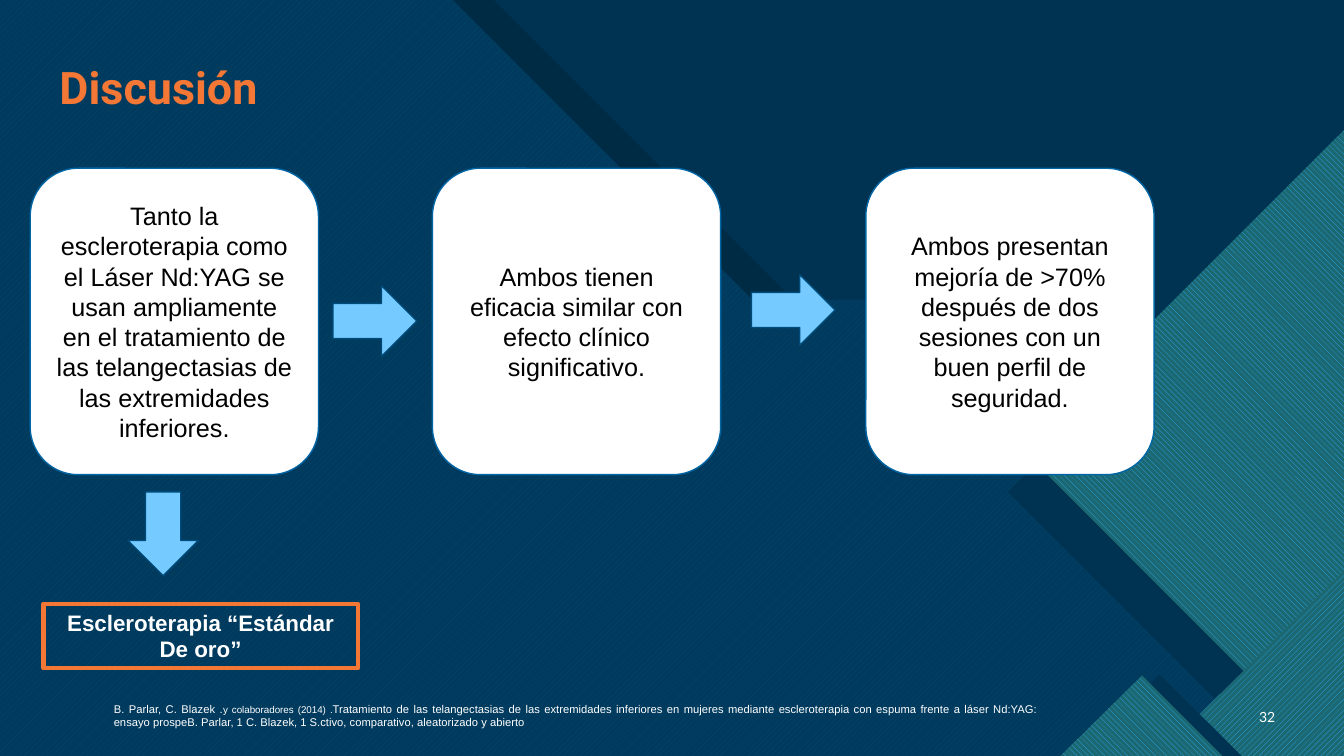
from dataclasses import dataclass
from typing import Any, Optional

import lxml.etree
import pptx
import pptx.dml.color
import pptx.enum.dml
import pptx.enum.shapes
import pptx.enum.text
import pptx.oxml.ns
import pptx.util

Pt = pptx.util.Pt
Kind = pptx.enum.shapes.MSO_SHAPE
Weave = pptx.enum.dml.MSO_PATTERN
Align = pptx.enum.text.PP_ALIGN
Anchor = pptx.enum.text.MSO_ANCHOR


@dataclass(frozen=True)
class Theme:
    navy: str = "003352"
    black: str = "000000"
    white: str = "FFFFFF"
    orange: str = "F47735"
    sky: str = "75CAFF"
    edge: str = "0065A4"
    rim: str = "004B79"
    aqua: str = "47C3D3"
    bright: str = "2FAFFF"
    teal: str = "1B6872"
    sans: str = "Arial"
    head: str = "Roboto"
    page: str = "Lato"
    title: float = 32
    body: float = 18
    label: float = 16
    folio: float = 10
    note: float = 8
    small: float = 7


THEME = Theme()


@dataclass(frozen=True)
class Box:
    left: float
    top: float
    width: float
    height: float


@dataclass(frozen=True)
class Panel:
    """A backdrop outline, plain or woven with a second colour."""
    points: tuple[tuple[float, float], ...]
    color: str
    back: Optional[str] = None
    weave: Any = None
    alpha: int = 100


@dataclass(frozen=True)
class Card:
    left: float
    text: str


@dataclass(frozen=True)
class Arrow:
    left: float
    top: float
    turn: int = 0


@dataclass(frozen=True)
class Run:
    text: str
    size: float


def slope(start: float, end: float) -> tuple[tuple[float, float], ...]:
    """Left-hand area whose edge steps down at 45 degrees."""
    step = 213.84
    shelf = start + step + 90.72
    low = step + end - shelf
    tail = ((end, low), (end, 540)) if low < 540 else ((end, 540),)
    return ((0, 0), (start, 0), (start + step, step), (shelf, step), *tail, (0, 540))


PANELS = (
    Panel(((0, 0), (960, 0), (960, 540), (0, 540)), THEME.navy),
    Panel(slope(352.8, 960), THEME.black),
    Panel(slope(323.28, 954), THEME.aqua, THEME.edge, Weave.WIDE_UPWARD_DIAGONAL),
    Panel(slope(500.4, 960), THEME.navy, alpha=85),
    Panel(((960, 111.6), (960, 509.8), (878.4, 509.8), (720, 351.4)), THEME.navy),
    Panel(((960, 92.9), (960, 530.6), (939.6, 530.6), (730.8, 321.8)),
          THEME.bright, THEME.teal, Weave.WIDE_DOWNWARD_DIAGONAL),
    Panel(((960, 407.5), (960, 540), (827.3, 540)),
          THEME.bright, THEME.teal, Weave.WIDE_UPWARD_DIAGONAL),
    Panel(((887, 540), (828.3, 481.7), (769.7, 540)), THEME.navy),
    Panel(((757.4, 540), (815.8, 482.4), (873.4, 540)),
          THEME.bright, THEME.teal, Weave.WIDE_DOWNWARD_DIAGONAL),
)
CARDS = (
    Card(21.6, "Tanto la escleroterapia como el Láser Nd:YAG se usan ampliamente "
               "en el tratamiento de las telangectasias de las extremidades inferiores."),
    Card(308.9, "Ambos tienen eficacia similar con efecto clínico significativo."),
    Card(618.5, "Ambos presentan mejoría de >70% después de dos sesiones "
                "con un buen perfil de seguridad."),
)
ARROWS = (Arrow(91.4, 351.4), Arrow(242.6, 199.4, 270), Arrow(541.4, 191.5, 270))
SOURCE = (
    Run("B. Parlar, C. Blazek .", THEME.note),
    Run("y colaboradores (2014) .", THEME.small),
    Run("Tratamiento de las telangectasias de las extremidades inferiores en mujeres "
        "mediante escleroterapia con espuma frente a láser Nd:YAG: ensayo prospeB. "
        "Parlar, 1 C. Blazek, 1 S.ctivo, comparativo, aleatorizado y abierto", THEME.note),
)


def rgb(code: str) -> pptx.dml.color.RGBColor:
    return pptx.dml.color.RGBColor.from_string(code)


def write(shape: Any, *lines: tuple[Run, ...], color: str = THEME.white,
          font: str = THEME.sans, bold: bool = False, align: Any = Align.CENTER,
          anchor: Any = Anchor.MIDDLE, space: Optional[float] = None) -> None:
    """Fill a shape with one paragraph for each line of runs."""
    frame = shape.text_frame
    frame.word_wrap = True
    frame.auto_size = pptx.enum.text.MSO_AUTO_SIZE.NONE
    frame.vertical_anchor = anchor
    for place, line in enumerate(lines):
        para = frame.add_paragraph() if place else frame.paragraphs[0]
        para.alignment = align
        para.line_spacing = space
        for part in line:
            run = para.add_run()
            run.text = part.text
            run.font.size = Pt(part.size)
            run.font.name = font
            run.font.bold = bold
            run.font.color.rgb = rgb(color)


def place(shape: Any, box: Box) -> None:
    shape.left, shape.top = Pt(box.left), Pt(box.top)
    shape.width, shape.height = Pt(box.width), Pt(box.height)


def draw(shapes: Any, kind: Any, box: Box, line: str, weight: float = 1,
         fill: Optional[str] = None) -> Any:
    shape = shapes.add_shape(kind, Pt(box.left), Pt(box.top), Pt(box.width), Pt(box.height))
    shape.shadow.inherit = False
    if fill:
        shape.fill.solid()
        shape.fill.fore_color.rgb = rgb(fill)
    else:
        shape.fill.background()
    shape.line.color.rgb = rgb(line)
    shape.line.width = Pt(weight)
    return shape


def label(shapes: Any, box: Box) -> Any:
    return shapes.add_textbox(Pt(box.left), Pt(box.top), Pt(box.width), Pt(box.height))


def pave(shapes: Any, panel: Panel) -> None:
    """Draw one backdrop panel."""
    first, *rest = [(Pt(x), Pt(y)) for x, y in panel.points]
    pen = shapes.build_freeform(*first)
    pen.add_line_segments(rest, close=True)
    shape = pen.convert_to_shape()
    shape.shadow.inherit = False
    shape.line.fill.background()
    if panel.back:
        shape.fill.patterned()
        shape.fill.pattern = panel.weave
        shape.fill.back_color.rgb = rgb(panel.back)
    else:
        shape.fill.solid()
    shape.fill.fore_color.rgb = rgb(panel.color)
    if panel.alpha < 100:
        qn = pptx.oxml.ns.qn
        tint = shape.element.spPr.find(qn("a:solidFill")).find(qn("a:srgbClr"))
        lxml.etree.SubElement(tint, qn("a:alpha"), val=str(panel.alpha * 1000))


def main() -> None:
    deck = pptx.Presentation()
    deck.slide_width, deck.slide_height = Pt(960), Pt(540)
    slide = deck.slides.add_slide(deck.slide_layouts[5])
    shapes = slide.shapes

    for panel in PANELS:
        pave(shapes, panel)

    title = shapes.title
    title.element.getparent().append(title.element)  # lift above the backdrop
    place(title, Box(35.3, 42.5, 882.7, 42.5))
    write(title, (Run("Discusión", THEME.title),), color=THEME.orange, font=THEME.head,
          bold=True, align=Align.LEFT, anchor=Anchor.BOTTOM, space=0.9)

    for card in CARDS:
        shape = draw(shapes, Kind.ROUNDED_RECTANGLE, Box(card.left, 120.2, 205.9, 218.9),
                     THEME.edge, fill=THEME.white)
        write(shape, (Run(card.text, THEME.body),), color=THEME.black)

    for arrow in ARROWS:
        shape = draw(shapes, Kind.DOWN_ARROW, Box(arrow.left, arrow.top, 50.4, 59.8),
                     THEME.rim, fill=THEME.sky)
        shape.rotation = arrow.turn

    gold = draw(shapes, Kind.RECTANGLE, Box(31, 431.3, 224.6, 46.1), THEME.orange, 3)
    write(gold, (Run("Escleroterapia “Estándar", THEME.label),),
          (Run("De oro”", THEME.label),), bold=True, anchor=Anchor.TOP)

    write(label(shapes, Box(74.2, 498.2, 674.6, 26.6)), SOURCE,
          align=Align.JUSTIFY, anchor=Anchor.TOP)
    write(label(shapes, Box(886.3, 497.5, 31.7, 28.8)), (Run("32", THEME.folio),),
          font=THEME.page, align=Align.RIGHT)

    deck.save("out.pptx")


if __name__ == "__main__":
    main()
